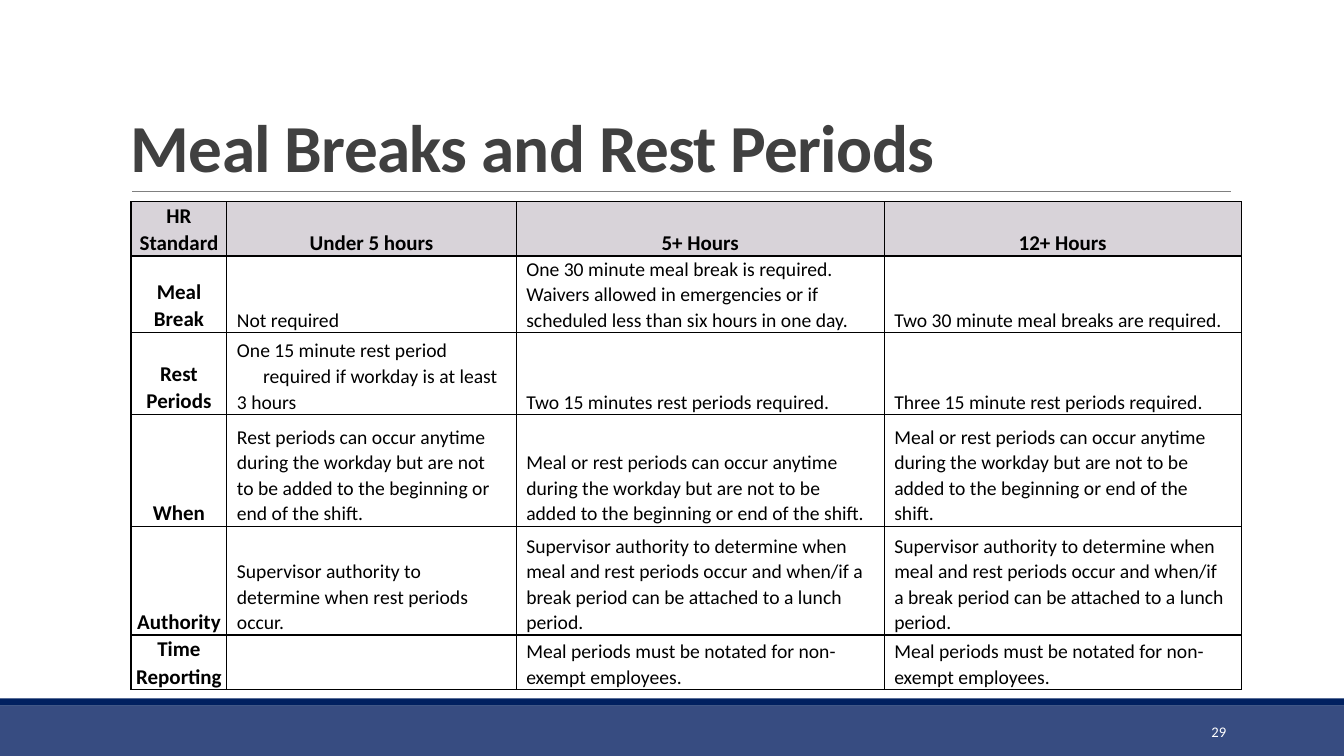
from lxml import etree
from pptx import Presentation
from pptx.dml.color import RGBColor
from pptx.enum.shapes import MSO_CONNECTOR, MSO_SHAPE
from pptx.enum.text import MSO_ANCHOR, PP_ALIGN
from pptx.oxml.ns import qn
from pptx.util import Inches, Pt

LEFT, CENTER, RIGHT = PP_ALIGN.LEFT, PP_ALIGN.CENTER, PP_ALIGN.RIGHT
BOTTOM, MIDDLE = MSO_ANCHOR.BOTTOM, MSO_ANCHOR.MIDDLE
RECTANGLE, STRAIGHT = MSO_SHAPE.RECTANGLE, MSO_CONNECTOR.STRAIGHT

TITLE = "Meal Breaks and Rest Periods"
PAGE_NUMBER = "29"
AUTHORITY = ("Supervisor authority to determine when meal and rest periods occur "
             "and when/if a break period can be attached to a lunch period.")
REPORTING = "Meal periods must be notated for non-exempt employees."
ANYTIME = ("periods can occur anytime during the workday but are not to be "
           "added to the beginning or end of the shift.")
STANDARDS = [
    ("HR Standard", "Under 5 hours", "5+ Hours", "12+ Hours"),
    ("Meal Break",
     "Not required",
     "One 30 minute meal break is required. Waivers allowed in emergencies or if "
     "scheduled less than six hours in one day.",
     "Two 30 minute meal breaks are required."),
    ("Rest Periods",
     "One 15 minute rest period\nrequired if workday is at least 3 hours",
     "Two 15 minutes rest periods required.",
     "Three 15 minute rest periods required."),
    ("When", f"Rest {ANYTIME}", f"Meal or rest {ANYTIME}", f"Meal or rest {ANYTIME}"),
    ("Authority",
     "Supervisor authority to determine when rest periods occur.",
     AUTHORITY, AUTHORITY),
    ("Time Reporting", "", REPORTING, REPORTING),
]
COLUMN_WIDTHS = (0.95, 2.87, 3.65, 3.54)
ROW_HEIGHTS = (0.54, 0.76, 0.81, 1.11, 1.08, 0.54)
TABLE_LEFT, TABLE_TOP = 1.3, 2
CONTINUATION_INDENT = 0.26

FONT = "Calibri"
COLORS = {
    "title": "404040", "rule": "808080", "footer": "374C81", "stripe": "002060",
    "header": "D8D3D9", "body": "FFFFFF", "text": "000000", "page": "FFFFFF",
}


def color(name):
    return RGBColor.from_string(COLORS[name])


def style(paragraph, size, color_name, bold=False, align=LEFT, spacing=1):
    paragraph.alignment = align
    paragraph.line_spacing = spacing
    font = paragraph.font
    font.name, font.size, font.bold = FONT, Pt(size), bold
    font.color.rgb = color(color_name)


def add_band(slide, top, height, color_name):
    band = slide.shapes.add_shape(
        RECTANGLE, 0, Inches(top), Inches(13.33), Inches(height))
    band.shadow.inherit = False
    band.fill.solid()
    band.fill.fore_color.rgb = color(color_name)
    band.line.fill.background()


def add_label(slide, text, box, anchor):
    """Add a wrapped one-line text box and return its paragraph."""
    frame = slide.shapes.add_textbox(*map(Inches, box)).text_frame
    frame.word_wrap = True
    frame.vertical_anchor = anchor
    frame.text = text
    return frame.paragraphs[0]


def add_borders(cell):
    properties = cell._tc.get_or_add_tcPr()
    for side in ("a:lnL", "a:lnR", "a:lnT", "a:lnB"):
        border = etree.SubElement(properties, qn(side), w=str(Pt(1)))
        fill = etree.SubElement(border, qn("a:solidFill"))
        etree.SubElement(fill, qn("a:srgbClr"), val=COLORS["text"])


def fill_cell(cell, text, is_header, is_heading):
    """Headers and row headings are bold and centred; other cells read left."""
    add_borders(cell)
    cell.fill.solid()
    cell.fill.fore_color.rgb = color("header" if is_header else "body")
    cell.vertical_anchor = BOTTOM
    cell.margin_left = cell.margin_right = Inches(0.01 if is_heading else 0.1)
    cell.margin_top = cell.margin_bottom = 0
    cell.text = text
    for index, paragraph in enumerate(cell.text_frame.paragraphs):
        style(paragraph, 15 if is_heading else 14, "text", is_heading,
              CENTER if is_heading else LEFT, 1.07)
        if index:
            paragraph._p.get_or_add_pPr().set(
                "indent", str(Inches(CONTINUATION_INDENT)))


def add_standards(slide):
    table = slide.shapes.add_table(
        len(STANDARDS), len(COLUMN_WIDTHS), Inches(TABLE_LEFT), Inches(TABLE_TOP),
        Inches(sum(COLUMN_WIDTHS)), Inches(sum(ROW_HEIGHTS))).table
    for column, width in zip(table.columns, COLUMN_WIDTHS):
        column.width = Inches(width)
    for row, height in zip(table.rows, ROW_HEIGHTS):
        row.height = Inches(height)
    for r, standard in enumerate(STANDARDS):
        for c, text in enumerate(standard):
            fill_cell(table.cell(r, c), text, r == 0, r == 0 or c == 0)


def main():
    deck = Presentation()
    deck.slide_width, deck.slide_height = Inches(13.33), Inches(7.5)
    slide = deck.slides.add_slide(deck.slide_layouts[6])

    add_band(slide, 7, 0.5, "footer")
    add_band(slide, 6.93, 0.07, "stripe")

    rule = slide.shapes.add_connector(
        STRAIGHT, Inches(1.31), Inches(1.9), Inches(12.21), Inches(1.9))
    rule.line.color.rgb = color("rule")
    rule.line.width = Pt(0.5)
    etree.SubElement(rule._element.spPr, qn("a:effectLst"))

    title = add_label(slide, TITLE, (1.2, 0.31, 11, 1.59), BOTTOM)
    style(title, 48, "title", bold=True, spacing=0.85)
    title.runs[0]._r.get_or_add_rPr().set("spc", "-50")

    add_standards(slide)

    page_number = add_label(slide, PAGE_NUMBER, (10.83, 7.06, 1.43, 0.4), MIDDLE)
    style(page_number, 10.5, "page", align=RIGHT)

    deck.save("out.pptx")


if __name__ == "__main__":
    main()
